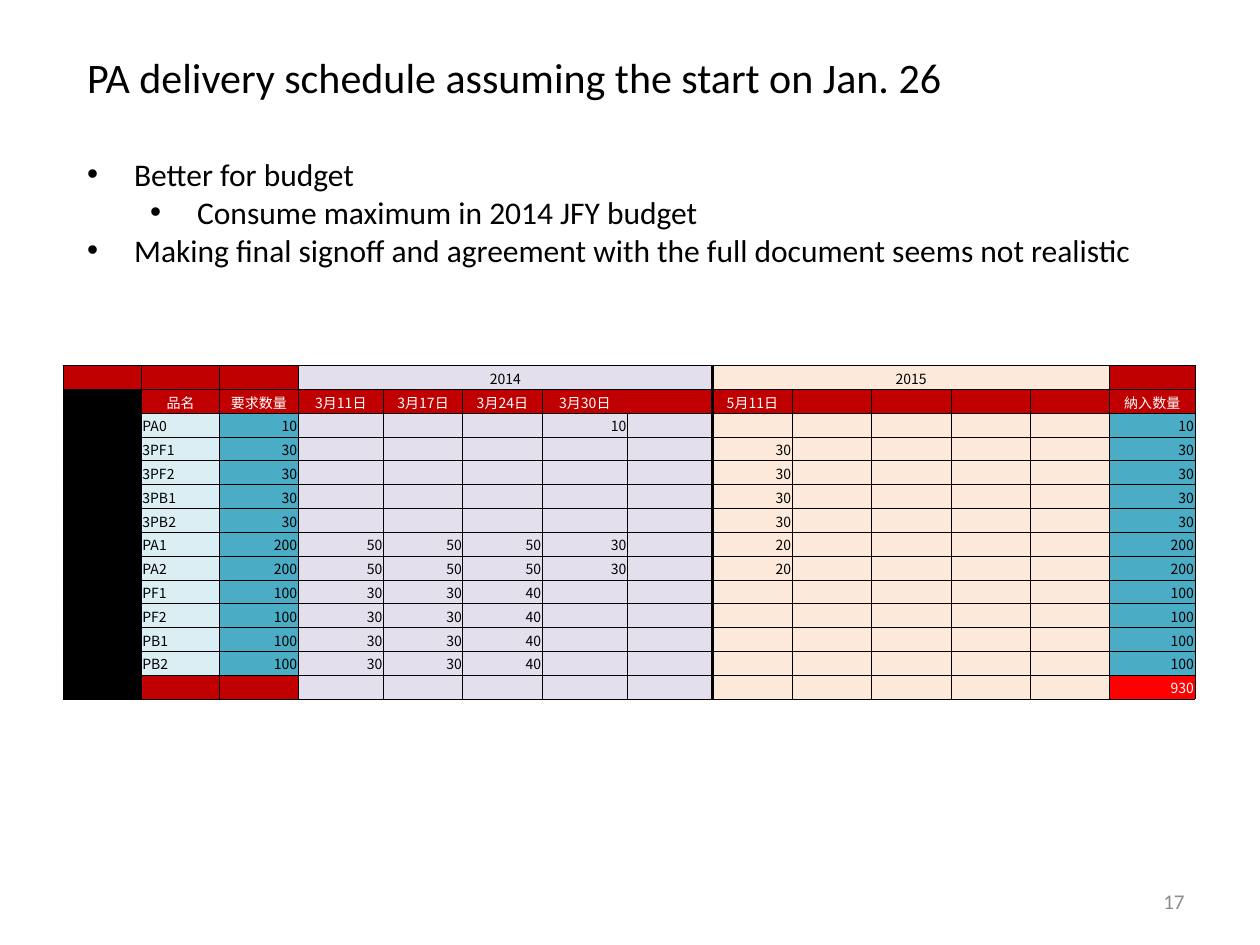
from lxml.etree import SubElement
from pptx import Presentation
from pptx.dml.color import RGBColor
from pptx.enum.text import MSO_ANCHOR, MSO_AUTO_SIZE, PP_ALIGN
from pptx.oxml.ns import qn
from pptx.util import Cm, Pt

HUES = {
    "black": "000000", "white": "FFFFFF", "head": "C00000", "total": "FF0000",
    "name": "DAEEF3", "count": "4BACC6", "early": "E4DFEC", "late": "FDE9D9",
    "page": "8C8C8C",
}
POINTS = [
    ("Better for budget", 0),
    ("Consume maximum in 2014 JFY budget", 1),
    ("Making final signoff and agreement with the full document seems not realistic", 0),
]
DATES = {3: "3月11日", 4: "3月17日", 5: "3月24日", 6: "3月30日", 8: "5月11日"}
PLANS = [
    (["PA0"], {6: 10}),
    (["3PF1", "3PF2", "3PB1", "3PB2"], {8: 30}),
    (["PA1", "PA2"], {3: 50, 4: 50, 5: 50, 6: 30, 8: 20}),
    (["PF1", "PF2", "PB1", "PB2"], {3: 30, 4: 30, 5: 40}),
]
ITEMS = [(name, plan) for names, plan in PLANS for name in names]
EARLY, LATE, LAST = 3, 8, 13
WIDE = (3, 6, 7, LAST)


class Deck:
    sans, cjk = "Calibri", "Noto Sans CJK JP"

    def __init__(self):
        self.file = Presentation()
        self.file.slide_width, self.file.slide_height = Cm(25.4), Cm(19.05)
        self.slide = self.file.slides.add_slide(self.file.slide_layouts[1])

    def place(self, shape, left, top, width, height):
        shape.left, shape.top = Cm(left), Cm(top)
        shape.width, shape.height = Cm(width), Cm(height)

    def style(self, para, size, font, hue="black", align=PP_ALIGN.LEFT):
        para.alignment = align
        for run in para.runs:
            run.font.size, run.font.name = Pt(size), font
            run.font.color.rgb = RGBColor.from_string(HUES[hue])
            if font == self.cjk:
                SubElement(run.font._element, qn("a:ea"), typeface=font)

    def title(self, text, *box):
        shape = self.slide.shapes.title
        self.place(shape, *box)
        frame = shape.text_frame
        frame.text = text
        frame.vertical_anchor = MSO_ANCHOR.TOP
        frame.auto_size = MSO_AUTO_SIZE.NONE
        self.style(frame.paragraphs[0], 24, self.sans)

    def bullets(self, points, *box):
        shape = self.slide.placeholders[1]
        self.place(shape, *box)
        frame = shape.text_frame
        frame.text = "\n".join(text for text, level in points)
        frame.auto_size = MSO_AUTO_SIZE.NONE
        for para, (text, level) in zip(frame.paragraphs, points):
            para.level = level
            para.space_before = Pt(0)
            self.style(para, 18, self.sans)
            props = para._p.get_or_add_pPr()
            props.set("marL", str(Cm(0.95 + 1.27 * level)))
            props.set("indent", str(Cm(-0.95)))
            SubElement(props, qn("a:buChar"), char="•")

    def number(self, text, *box):
        frame = self.slide.shapes.add_textbox(*map(Cm, box)).text_frame
        frame.word_wrap = True
        frame.vertical_anchor = MSO_ANCHOR.MIDDLE
        frame.text = text
        self.style(frame.paragraphs[0], 12, self.sans, "page", PP_ALIGN.RIGHT)

    def border(self, cell, sides):
        props = cell._tc.get_or_add_tcPr()
        for side, width in sides.items():
            line = SubElement(props, qn("a:ln" + side), w=str(Pt(width)))
            if width:
                fill = SubElement(line, qn("a:solidFill"))
                SubElement(fill, qn("a:srgbClr"), val=HUES["black"])
            else:
                SubElement(line, qn("a:noFill"))

    def cell(self, cell, text, fill, hue, align, sides):
        self.border(cell, sides)
        cell.fill.solid()
        cell.fill.fore_color.rgb = RGBColor.from_string(HUES[fill])
        cell.margin_left = cell.margin_right = cell.margin_top = Cm(0.02)
        cell.margin_bottom = 0
        cell.vertical_anchor = MSO_ANCHOR.MIDDLE
        para = cell.text_frame.paragraphs[0]
        if text:
            para.text = text
            self.style(para, 8, self.cjk, hue, align)
        else:
            SubElement(para._p, qn("a:endParaRPr"), sz="800")

    def table(self, grid, left, top):
        count, wide = len(grid), [1.58] * 3 + [1.6] * 11
        for col in WIDE:
            wide[col] = 1.72
        frame = self.slide.shapes.add_table(
            count, len(wide), Cm(left), Cm(top), Cm(sum(wide)), Cm(0.48 * count))
        table = frame.table
        table.first_row = table.horz_banding = False
        for col, width in zip(table.columns, wide):
            col.width = Cm(width)
        for line in table.rows:
            line.height = Cm(0.48)
        for start in (EARLY, LATE):
            table.cell(0, start).merge(table.cell(0, start + 4))
        for row, texts in enumerate(grid):
            for col, text in enumerate(texts):
                fill = tint(row, col, count - 1)
                hue = "white" if fill in ("head", "total") else "black"
                if row < 2:
                    align = PP_ALIGN.CENTER
                else:
                    align = PP_ALIGN.LEFT if col == 1 else PP_ALIGN.RIGHT
                self.cell(table.cell(row, col), text, fill, hue, align, edges(row, col))


def tint(row, col, last):
    if col == 0:
        return "black" if row else "head"
    if row == 1:
        return "head"
    if EARLY <= col < LAST:
        return "early" if col < LATE else "late"
    if row == last:
        return "total" if col == LAST else "head"
    if row == 0:
        return "head"
    return "name" if col == 1 else "count"


def edges(row, col):
    sides = dict.fromkeys("LRTB", 0.5)
    if col == LATE:
        sides["L"] = 2
    if col == LATE - 1 or (row == 0 and col == EARLY):
        sides["R"] = 2
    if row == 1 and col in (6, 7):
        sides["R" if col == 6 else "L"] = 0
    return sides


def line(cells):
    return [str(cells.get(col, "")) for col in range(LAST + 1)]


def main():
    deck = Deck()
    grid = [line({EARLY: 2014, LATE: 2015}),
            line({1: "品名", 2: "要求数量", **DATES, LAST: "納入数量"})]
    for name, plan in ITEMS:
        due = sum(plan.values())
        grid.append(line({1: name, 2: due, **plan, LAST: due}))
    grid.append(line({LAST: sum(sum(plan.values()) for name, plan in ITEMS)}))
    deck.title("PA delivery schedule assuming the start on Jan. 26", 1.5, 0.91, 23, 1.3)
    deck.bullets(POINTS, 1.5, 3, 23, 2.6)
    deck.table(grid, 1.27, 7.37)
    deck.number("17", 18.2, 17.66, 5.93, 1.01)
    deck.file.save("out.pptx")


if __name__ == "__main__":
    main()
